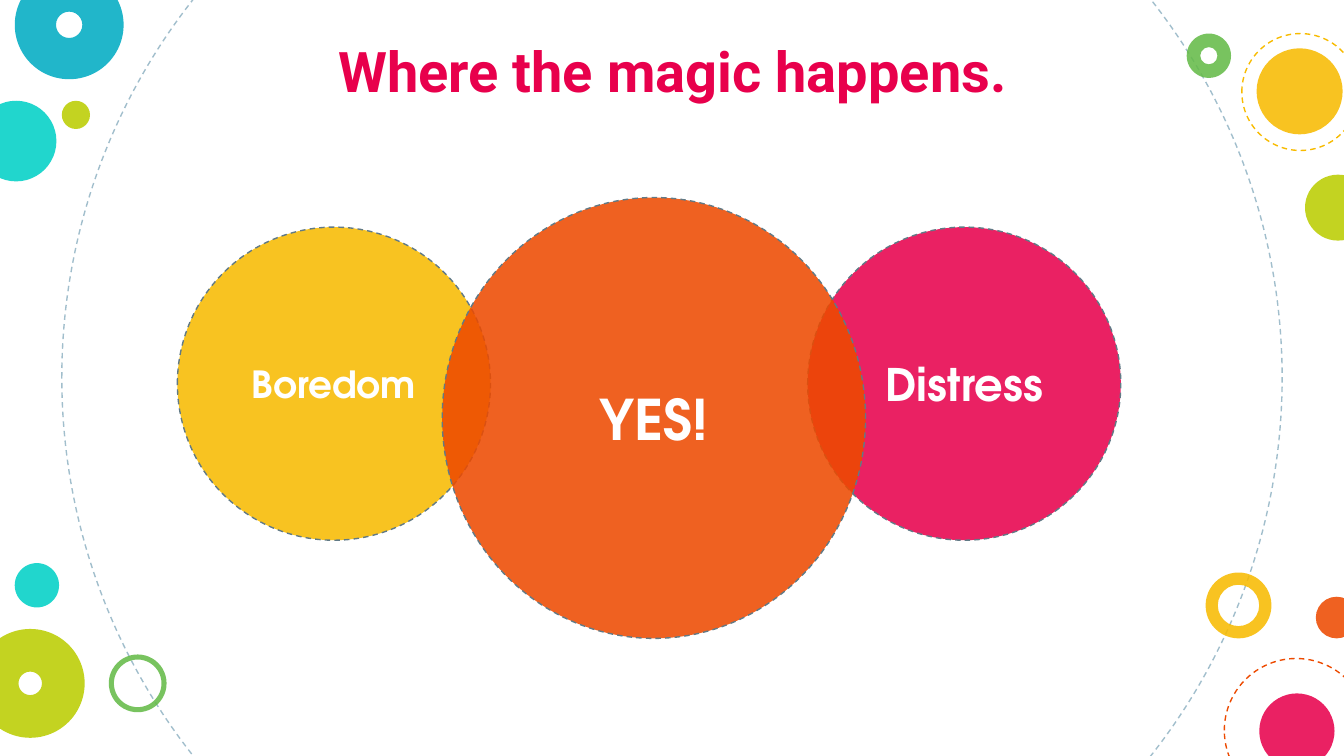
from dataclasses import dataclass

from lxml import etree
from pptx import Presentation
from pptx.dml.color import RGBColor
from pptx.enum.dml import MSO_LINE
from pptx.enum.shapes import MSO_SHAPE
from pptx.enum.text import MSO_ANCHOR, PP_ALIGN
from pptx.oxml.ns import qn
from pptx.util import Inches, Pt


@dataclass(frozen=True)
class Theme:
    yellow: str = "F8BB00"
    orange: str = "ED4A00"
    pink: str = "E8004C"
    lime: str = "BBCD00"
    green: str = "65BB48"
    turquoise: str = "00D1C6"
    blue: str = "00ACC3"
    pale_gray: str = "A1BECC"
    slate: str = "617A86"
    white: str = "FFFFFF"
    opacity: int = 87000
    line_width: float = 0.75
    title_font: str = "Roboto"
    label_font: str = "TeX Gyre Adventor"
    title_size: int = 30
    small_size: int = 20
    medium_size: int = 24
    large_size: int = 30


theme = Theme()


def add_circle(left, top, width, height, fill=None, line=None, hole=None):
    """Add a translucent disc, a ring (with hole) or a dashed outline."""
    kind = MSO_SHAPE.OVAL if hole is None else MSO_SHAPE.DONUT
    circle = page.shapes.add_shape(
        kind, Inches(left), Inches(top), Inches(width), Inches(height))
    circle.shadow.inherit = False
    if hole is not None:
        circle.adjustments[0] = hole
    if fill:
        circle.fill.solid()
        circle.fill.fore_color.rgb = RGBColor.from_string(fill)
        color = circle.element.spPr.find(qn("a:solidFill"))[0]
        etree.SubElement(color, qn("a:alpha"), val=str(theme.opacity))
    else:
        circle.fill.background()
    if line:
        circle.line.color.rgb = RGBColor.from_string(line)
        circle.line.width = Pt(theme.line_width)
        circle.line.dash_style = MSO_LINE.DASH
    else:
        circle.line.fill.background()
    return circle


def write_text(box, text, font, size, color, anchor):
    """Write one centred bold line into a shape."""
    frame = box.text_frame
    frame.word_wrap = True
    frame.vertical_anchor = anchor
    frame.margin_left = frame.margin_right = Inches(0.1)
    frame.margin_top = frame.margin_bottom = Inches(0.1)
    para = frame.paragraphs[0]
    para.alignment = PP_ALIGN.CENTER
    span = para.add_run()
    span.text = text
    span.font.name = font
    span.font.size = Pt(size)
    span.font.bold = True
    span.font.color.rgb = RGBColor.from_string(color)


# Widescreen page, 16:9
deck = Presentation()
deck.slide_width, deck.slide_height = Inches(10), Inches(10 * 9 / 16)
page = deck.slides.add_slide(deck.slide_layouts[5])

# Background circles: left, top, diameter, fill, dashed line, hole
decorations = [
    (0.46, -1.73, 9.08, None, theme.pale_gray, None),
    (-0.18, 0.75, 0.6, theme.turquoise, None, None),
    (8.97, 4.26, 0.49, theme.yellow, None, 0.186),
    (0.11, -0.22, 0.81, theme.blue, None, 0.379),
    (0.46, 0.75, 0.21, theme.lime, None, None),
    (9.11, 4.9, 1.07, None, theme.orange, None),
    (0.81, 4.87, 0.43, theme.green, None, 0.088),
    (9.79, 4.44, 0.31, theme.orange, None, None),
    (-0.18, 4.68, 0.81, theme.lime, None, 0.392),
    (9.37, 5.16, 0.56, theme.pink, None, None),
    (8.83, 0.25, 0.33, theme.green, None, 0.306),
    (9.35, 0.36, 0.64, theme.yellow, None, None),
    (9.71, 1.3, 0.49, theme.lime, None, None),
    (9.24, 0.25, 0.87, None, theme.yellow, None),
    (0.11, 4.19, 0.33, theme.turquoise, None, None),
]
for left, top, diameter, fill, line, hole in decorations:
    add_circle(left, top, diameter, diameter, fill, line, hole)

# Title
title = page.shapes.title
title.left, title.top = Inches(2.12), Inches(0.17)
title.width, title.height = Inches(5.77), Inches(0.7)
write_text(title, "Where the magic happens.", theme.title_font,
           theme.title_size, theme.pink, MSO_ANCHOR.BOTTOM)

# Overlapping zones, with the middle one in front
zones = [
    ("Boredom", 1.32, 1.69, 2.33, 2.33, theme.yellow, theme.small_size),
    ("Distress", 6.01, 1.69, 2.33, 2.33, theme.pink, theme.medium_size),
    ("YES!", 3.29, 1.47, 3.15, 3.28, theme.orange, theme.large_size),
]
for label, left, top, width, height, fill, size in zones:
    zone = add_circle(left, top, width, height, fill, theme.slate)
    write_text(zone, label, theme.label_font, size, theme.white,
               MSO_ANCHOR.MIDDLE)

deck.save("out.pptx")
